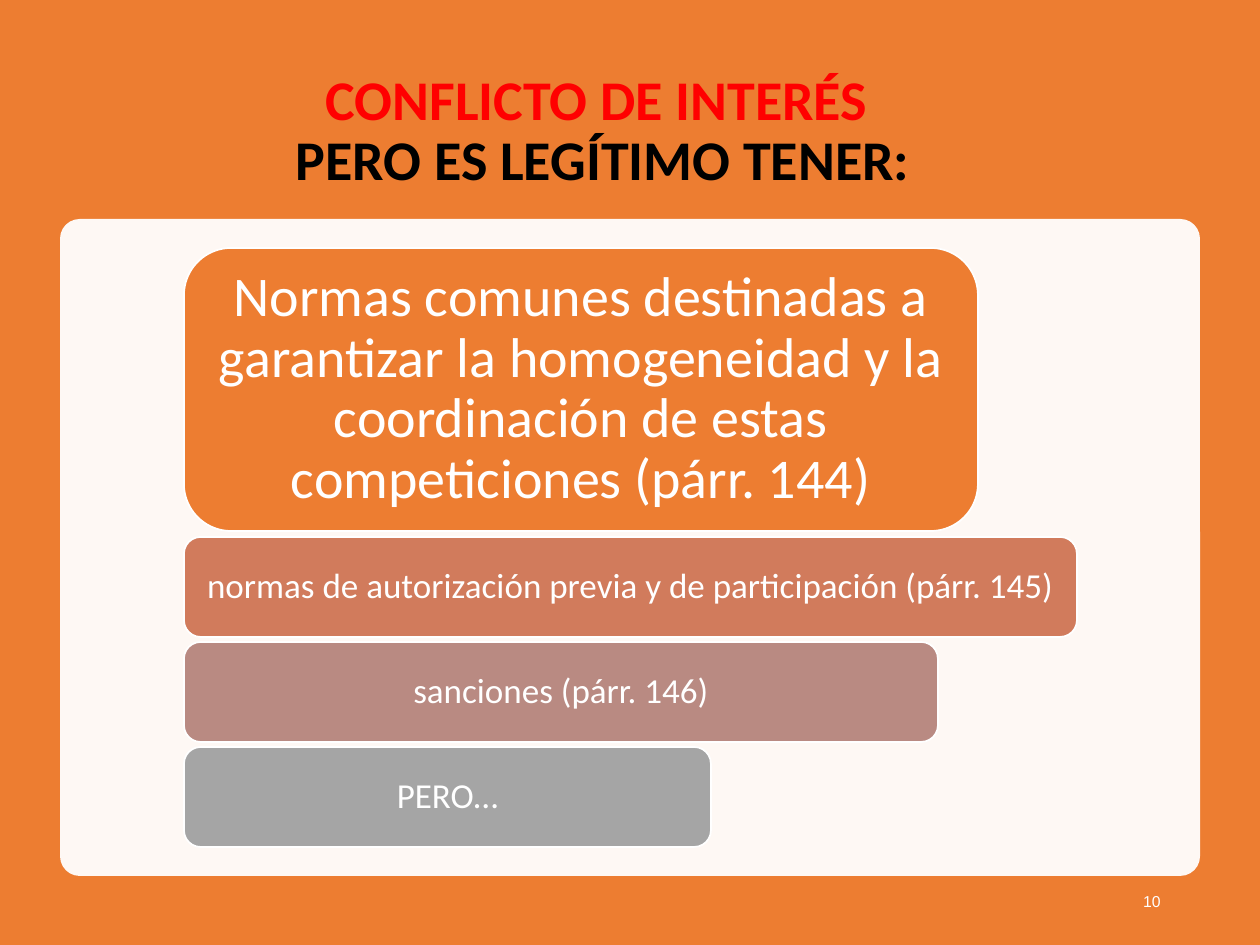
from lxml import etree
from pptx import Presentation
from pptx import util as u
from pptx.dml.color import RGBColor
from pptx.enum import shapes, text
from pptx.oxml.ns import qn

PX = 914400 / 126  # EMU in one px


def px(*nums):
    return [u.Emu(round(n * PX)) for n in nums]


def hue(code):
    return RGBColor.from_string(code)


deck = Presentation()
deck.slide_width, deck.slide_height = px(1260, 945)
slide = deck.slides.add_slide(deck.slide_layouts[5])
title = slide.shapes.title
tree = slide.shapes

# Orange backdrop and pale rounded panel, both behind the title
for at, (kind, box, fill) in enumerate([
    (shapes.MSO_SHAPE.RECTANGLE, (0, 0, 1260, 945), "ED7D31"),
    (shapes.MSO_SHAPE.ROUNDED_RECTANGLE, (60, 219, 1140, 657), "FFFFFF"),
]):
    panel = tree.add_shape(kind, *px(*box))
    panel.shadow.inherit = False
    panel.fill.solid()
    panel.fill.fore_color.rgb = hue(fill)
    panel.line.fill.background()
    title._element.addprevious(panel._element)
panel.adjustments[0] = 0.03
tint = panel._element.spPr.find(qn("a:solidFill"))[0]
etree.SubElement(tint, qn("a:alpha"), val="95000")

# Title in two colours
title.left, title.top, title.width, title.height = px(33, 63, 1140, 139)
frame = title.text_frame
frame.text = "CONFLICTO DE INTERÉS \vPERO ES LEGÍTIMO TENER:"
frame.auto_size = text.MSO_AUTO_SIZE.NONE
frame.vertical_anchor = text.MSO_ANCHOR.MIDDLE
para = frame.paragraphs[0]
para.alignment = text.PP_ALIGN.CENTER
para.line_spacing = 0.9
for run, tone in zip(para.runs, ("FF0000", "000000")):
    run.font.name = "Calibri"
    run.font.size = u.Pt(32)
    run.font.bold = True
    run.font.color.rgb = hue(tone)
etree.SubElement(para._p.find(qn("a:br")), qn("a:rPr"), sz="3200", b="1")

# Stacked bars: top, width, height, fill, text size, side and top insets
bars = [
    (248, 794, 283, "ED7D31", 32, 16, 9,
     "Normas comunes destinadas a garantizar la homogeneidad "
     "y la coordinación de estas competiciones (párr. 144)"),
    (537, 893, 100, "D17B5C", 20, 10, 5,
     "normas de autorización previa y de participación (párr. 145)"),
    (642, 754, 100, "B98A82", 20, 10, 5, "sanciones (párr. 146)"),
    (747, 527, 100, "A5A5A5", 20, 10, 5, "PERO…"),
]
for top, wide, high, fill, size, side, edge, words in bars:
    bar = tree.add_shape(shapes.MSO_SHAPE.ROUNDED_RECTANGLE,
                         *px(184, top, wide, high))
    bar.shadow.inherit = False
    bar.fill.solid()
    bar.fill.fore_color.rgb = hue(fill)
    bar.line.color.rgb = hue("FFFFFF")
    bar.line.width = u.Pt(1)
    frame = bar.text_frame
    frame.text = words
    frame.word_wrap = True
    frame.vertical_anchor = text.MSO_ANCHOR.MIDDLE
    frame.margin_left, frame.margin_right = px(side, side)
    frame.margin_top, frame.margin_bottom = px(edge, edge)
    para = frame.paragraphs[0]
    para.alignment = text.PP_ALIGN.CENTER
    para.line_spacing = 0.9
    font = para.runs[0].font
    font.name = "Calibri"
    font.size = u.Pt(size)
    font.color.rgb = hue("FFFFFF")

# Page number
frame = tree.add_textbox(*px(890, 876, 283, 50)).text_frame
frame.text = "10"
frame.word_wrap = True
frame.vertical_anchor = text.MSO_ANCHOR.MIDDLE
para = frame.paragraphs[0]
para.alignment = text.PP_ALIGN.RIGHT
font = para.runs[0].font
font.name = "Arial"
font.size = u.Pt(9)
font.color.rgb = hue("FFFFFF")

deck.save("out.pptx")
